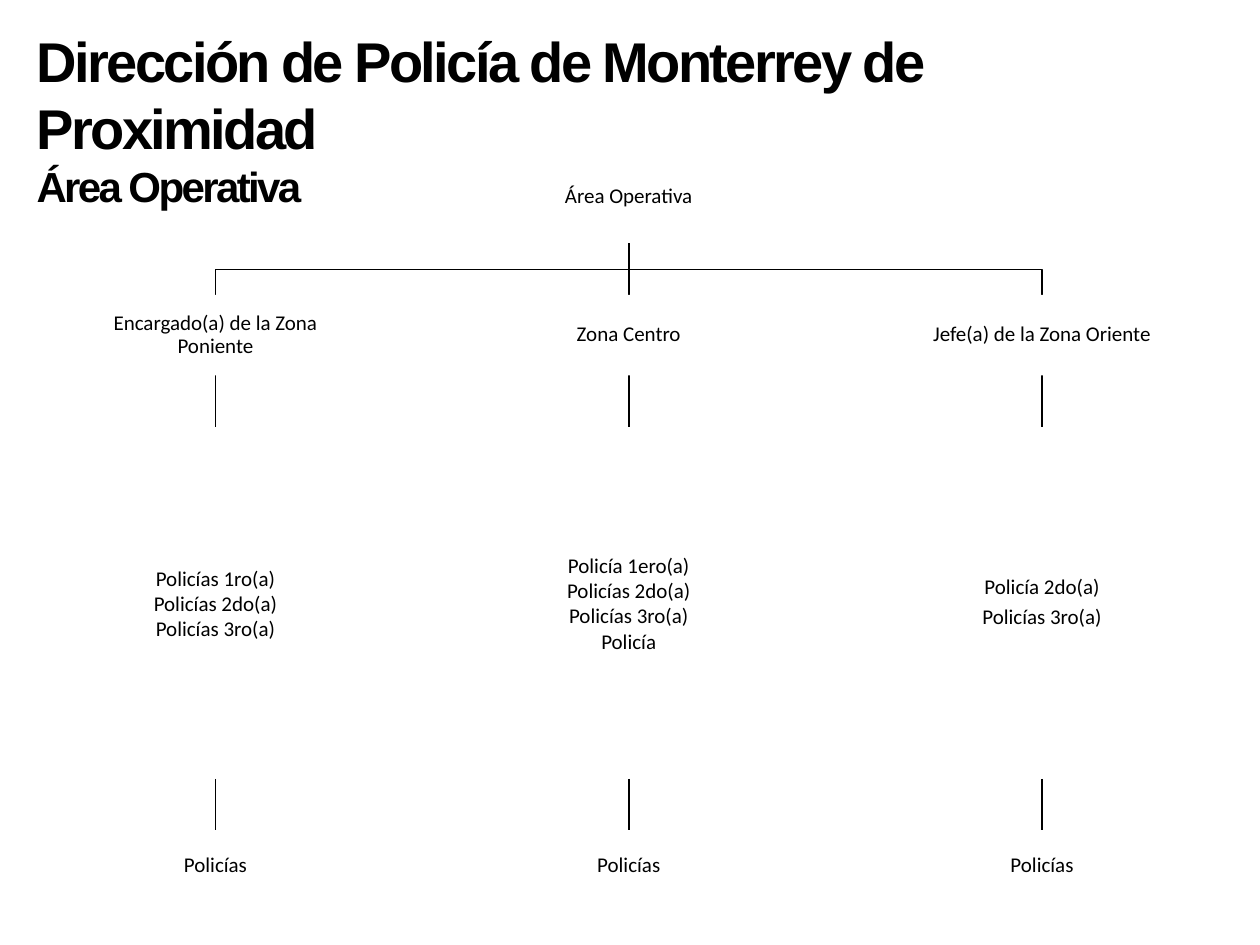
import lxml.etree
import pptx
import pptx.dml.color
import pptx.enum.shapes
import pptx.enum.text
import pptx.oxml.ns
import pptx.util

Inches = pptx.util.Inches
Pt = pptx.util.Pt

COLORS = {"ink": "000000", "paper": "FFFFFF"}
ROOT_CENTER = 4.99
COLUMN_STEP = 3.28
ROOT_TOP, ROOT_BOTTOM = 1.19, 1.93
BRANCH_MIDDLE = 2.14
ZONE_TOP, ZONE_BOTTOM = 2.34, 2.98
RANKS_TOP, RANKS_BOTTOM = 3.39, 6.18
OFFICERS_TOP, OFFICERS_BOTTOM = 6.59, 7.15

ZONES = [
    ("Encargado(a) de la Zona Poniente", 2.71, False,
     ["Policías 1ro(a)", "Policías 2do(a)", "Policías 3ro(a)"]),
    ("Zona Centro", 3.02, False,
     ["Policía 1ero(a)", "Policías 2do(a)", "Policías 3ro(a)", "Policía"]),
    ("Jefe(a) de la Zona Oriente", 2.71, True,
     ["Policía 2do(a)", "Policías 3ro(a)"]),
]


def color(name):
    return pptx.dml.color.RGBColor.from_string(COLORS[name])


class ChartSlide:
    title_font = "Arial"
    box_font = "Calibri"

    def __init__(self, slide):
        self.slide = slide

    def title(self, lines, left, top, width, height):
        shape = self.slide.shapes.title
        shape.left, shape.top = Inches(left), Inches(top)
        shape.width, shape.height = Inches(width), Inches(height)
        frame = shape.text_frame
        frame.word_wrap = True
        frame.auto_size = pptx.enum.text.MSO_AUTO_SIZE.SHAPE_TO_FIT_TEXT
        frame.vertical_anchor = pptx.enum.text.MSO_ANCHOR.TOP
        frame.text = "\n".join(text for text, size in lines)
        for paragraph, (text, size) in zip(frame.paragraphs, lines):
            paragraph.alignment = pptx.enum.text.PP_ALIGN.LEFT
            font = paragraph.runs[0].font
            font.name, font.size, font.bold = self.title_font, Pt(size), True
            font.color.rgb = color("ink")
            paragraph.runs[0]._r.get_or_add_rPr().set("spc", "-150")

    def style_line(self, line):
        line.color.rgb = color("ink")
        line.width = Pt(1)

    def vertical(self, x, top, bottom):
        connector = self.slide.shapes.add_connector(
            pptx.enum.shapes.MSO_CONNECTOR.STRAIGHT,
            Inches(x), Inches(top), Inches(x), Inches(bottom))
        self.style_line(connector.line)
        lxml.etree.SubElement(connector._element.spPr, pptx.oxml.ns.qn("a:effectLst"))

    def elbow(self, x):
        corners = [(ROOT_CENTER, BRANCH_MIDDLE), (x, BRANCH_MIDDLE), (x, ZONE_TOP)]
        builder = self.slide.shapes.build_freeform(Inches(ROOT_CENTER), Inches(ROOT_BOTTOM))
        builder.add_line_segments(
            [(Inches(across), Inches(down)) for across, down in corners], close=False)
        shape = builder.convert_to_shape()
        shape.shadow.inherit = False
        shape.fill.background()
        self.style_line(shape.line)

    def box(self, lines, center, top, bottom, width, filled=True, spaced=True):
        shape = self.slide.shapes.add_shape(
            pptx.enum.shapes.MSO_SHAPE.RECTANGLE,
            Inches(center - width / 2), Inches(top), Inches(width), Inches(bottom - top))
        shape.shadow.inherit = False
        shape.line.fill.background()
        if filled:
            shape.fill.solid()
            shape.fill.fore_color.rgb = color("paper")
        else:
            shape.fill.background()
        frame = shape.text_frame
        frame.word_wrap = True
        frame.vertical_anchor = pptx.enum.text.MSO_ANCHOR.MIDDLE
        frame.margin_left = frame.margin_right = Inches(0.01)
        frame.margin_top = frame.margin_bottom = Inches(0.01)
        frame.text = "\n".join(lines)
        for paragraph in frame.paragraphs:
            paragraph.alignment = pptx.enum.text.PP_ALIGN.CENTER
            if spaced:
                paragraph.line_spacing = 0.9
                paragraph.space_after = Pt(4.2)
            paragraph.font.name = self.box_font
            paragraph.font.size = Pt(12)
            paragraph.font.color.rgb = color("ink")


def main():
    presentation = pptx.Presentation()
    presentation.slide_width, presentation.slide_height = Inches(10), Inches(7.5)
    chart = ChartSlide(presentation.slides.add_slide(presentation.slide_layouts[5]))
    chart.title([("Dirección de Policía de Monterrey de Proximidad", 32),
                 ("Área Operativa", 24)], 0.19, 0.16, 7.46, 1.58)

    centers = [ROOT_CENTER + COLUMN_STEP * offset for offset in (-1, 0, 1)]
    for center in centers:
        if center == ROOT_CENTER:
            chart.vertical(center, ROOT_BOTTOM, ZONE_TOP)
        else:
            chart.elbow(center)
        chart.vertical(center, ZONE_BOTTOM, RANKS_TOP)
        chart.vertical(center, RANKS_BOTTOM, OFFICERS_TOP)

    chart.box(["Área Operativa"], ROOT_CENTER, ROOT_TOP, ROOT_BOTTOM, 2.15, filled=False)
    for center, (zone, ranks_width, spaced, ranks) in zip(centers, ZONES):
        chart.box([zone], center, ZONE_TOP, ZONE_BOTTOM, 1.95)
        chart.box(ranks, center, RANKS_TOP, RANKS_BOTTOM, ranks_width, spaced=spaced)
        chart.box(["Policías"], center, OFFICERS_TOP, OFFICERS_BOTTOM, 2.05)

    presentation.save("out.pptx")


if __name__ == "__main__":
    main()
